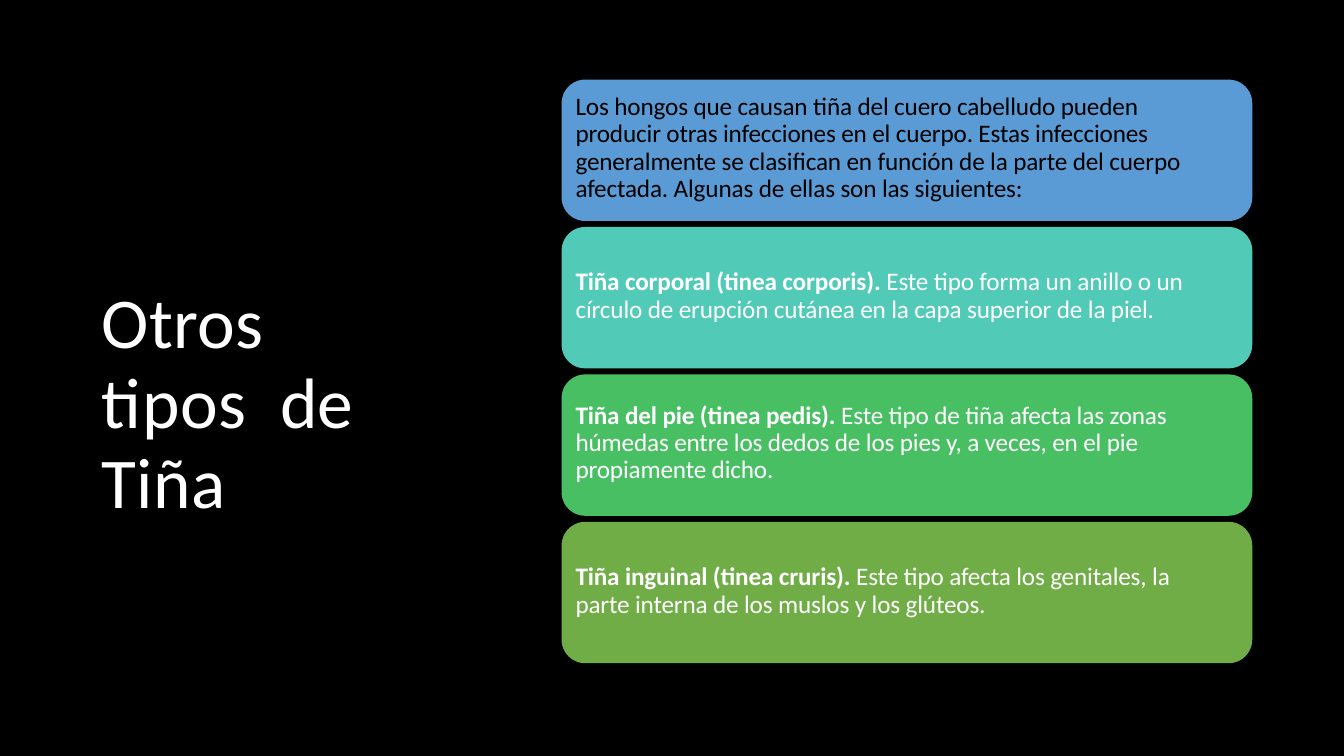
from pptx import Presentation
from pptx.dml.color import RGBColor
from pptx.enum.shapes import MSO_SHAPE
from pptx.enum.text import MSO_ANCHOR, PP_ALIGN
from pptx.util import Inches, Pt

COLORS = {
    "black": "000000", "white": "FFFFFF", "blue": "5B9BD5",
    "teal": "52CAB8", "green": "49BF64", "olive": "70AD47",
}
FONT = "Calibri"
TITLE = "Otros tipos  de Tiña"

# fill, text colour, line spacing, bold lead, body
CARDS = [
    ("blue", "black", 0.91, "",
     "Los hongos que causan tiña del cuero cabelludo pueden producir otras "
     "infecciones en el cuerpo. Estas infecciones generalmente se clasifican "
     "en función de la parte del cuerpo afectada. Algunas de ellas son las "
     "siguientes:"),
    ("teal", "white", Pt(20.2), "Tiña corporal (tinea corporis). ",
     "Este tipo forma un anillo o un círculo de erupción cutánea en la capa "
     "superior de la piel."),
    ("green", "white", 0.9, "Tiña del pie (tinea pedis). ",
     "Este tipo de tiña afecta las zonas húmedas entre los dedos de los pies "
     "y, a veces, en el pie propiamente dicho."),
    ("olive", "white", Pt(20.2), "Tiña inguinal (tinea cruris). ",
     "Este tipo afecta los genitales, la parte interna de los muslos y los "
     "glúteos."),
]
LEFT, WIDTH = 5.57, 6.85
TOP, BOTTOM, GAP = 0.79, 6.58, 0.06


def rgb(name):
    return RGBColor.from_string(COLORS[name])


def set_frame(frame, left, top, right, bottom):
    """Turn on wrapping and set the insets, in inches."""
    frame.word_wrap = True
    frame.margin_left, frame.margin_top = Inches(left), Inches(top)
    frame.margin_right, frame.margin_bottom = Inches(right), Inches(bottom)


def add_run(para, text, size, color, track, bold=False):
    """Add a run; track is the letter spacing in hundredths of a point."""
    run = para.add_run()
    run.text = text
    run.font.name, run.font.size, run.font.bold = FONT, Pt(size), bold
    run.font.color.rgb = rgb(color)
    run._r.get_or_add_rPr().set("spc", str(track))


def add_title(slide):
    box = slide.shapes.add_textbox(Inches(1), Inches(2.81), Inches(3), Inches(2.4))
    set_frame(box.text_frame, 0.01, 0, 0, 0)
    para = box.text_frame.paragraphs[0]
    para.line_spacing = Pt(57.1)
    add_run(para, TITLE, 51, "white", 30)


def add_card(slide, top, height, fill, color, spacing, lead, body):
    card = slide.shapes.add_shape(
        MSO_SHAPE.ROUNDED_RECTANGLE,
        Inches(LEFT), Inches(top), Inches(WIDTH), Inches(height))
    card.shadow.inherit = False
    card.fill.solid()
    card.fill.fore_color.rgb = rgb(fill)
    card.line.fill.background()
    frame = card.text_frame
    # The preset's own text area is already 0.07 inside the outline.
    set_frame(frame, 0.07, 0, 0.5, 0.04)
    frame.vertical_anchor = MSO_ANCHOR.MIDDLE
    para = frame.paragraphs[0]
    para.alignment = PP_ALIGN.LEFT
    para.line_spacing = spacing
    if lead:
        add_run(para, lead, 18, color, -10, True)
    add_run(para, body, 18, color, -10)


def main():
    deck = Presentation()
    deck.slide_width, deck.slide_height = Inches(13.33), Inches(7.5)
    slide = deck.slides.add_slide(deck.slide_layouts[6])
    slide.background.fill.solid()
    slide.background.fill.fore_color.rgb = rgb("black")
    add_title(slide)
    height = (BOTTOM - TOP + GAP) / len(CARDS) - GAP
    for i, card in enumerate(CARDS):
        add_card(slide, TOP + i * (height + GAP), height, *card)
    deck.save("out.pptx")


if __name__ == "__main__":
    main()
